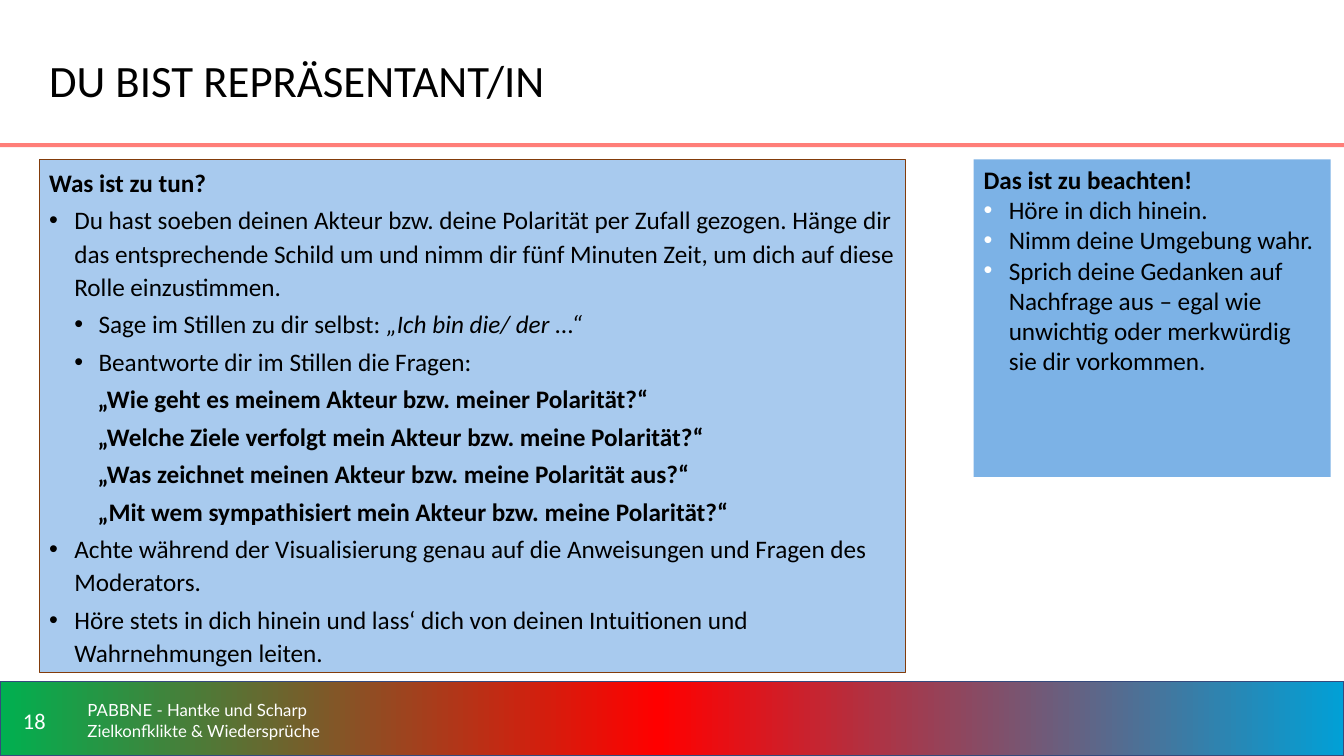
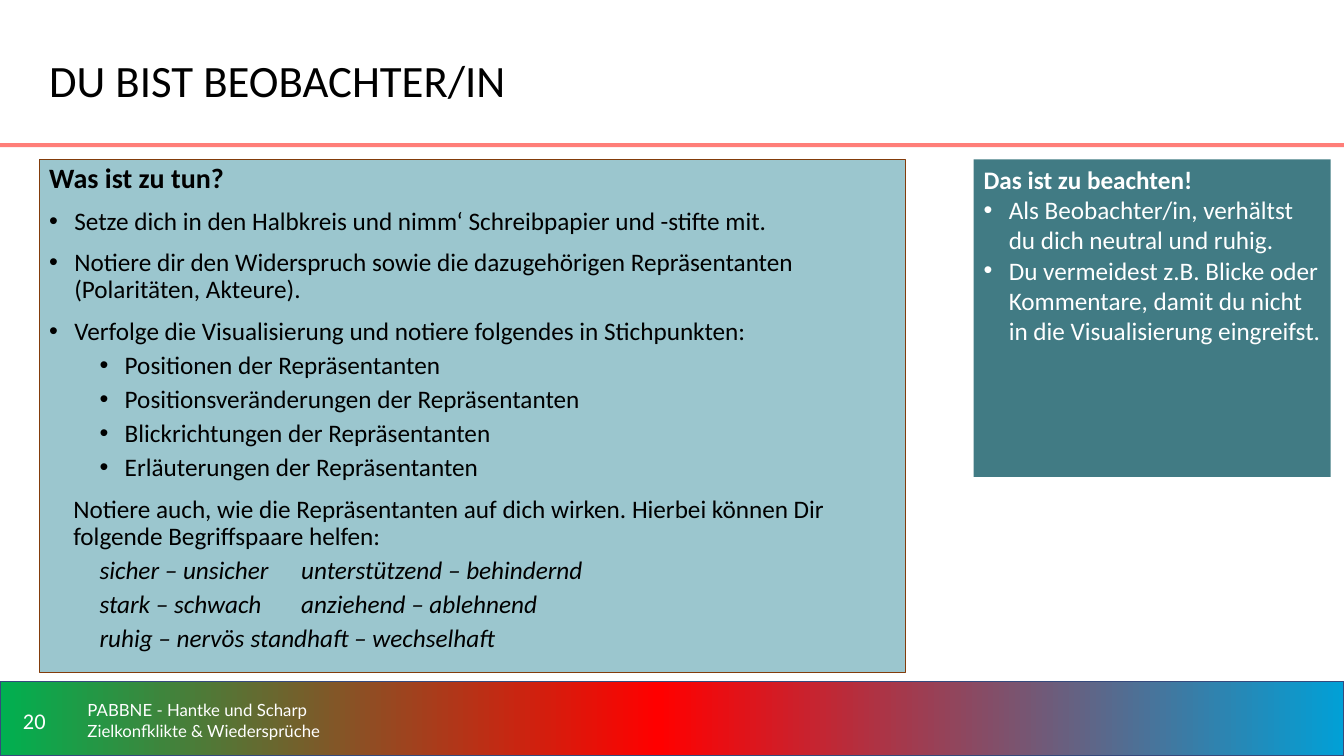
from copy import deepcopy

from pptx import Presentation
from pptx.dml.color import RGBColor
from pptx.enum.shapes import MSO_SHAPE as Shape
from pptx.enum.text import MSO_ANCHOR as Anchor, PP_ALIGN as Align
from pptx.oxml.ns import qn
from pptx.oxml.xmlchemy import OxmlElement
from pptx.util import Pt

# Content: paragraphs are (style, text) or (style, text, italic ending)
FOOTER = "PABBNE - Hantke und Scharp Zielkonfklikte & Wiedersprüche"
TASK_HEADING = "Was ist zu tun?"
ADVICE_HEADING = "Das ist zu beachten!"
SLIDES = [
    {
        "title": "DU BIST REPRÄSENTANT/IN",
        "number": "18",
        "task": {
            "fill": "task_blue", "text": "black", "bullet": "black",
            "heading_size": 18, "line_spacing": 1.1, "space": {0: 3, 1: 3},
            "paragraphs": [
                ("heading", TASK_HEADING),
                ("bullet", "Du hast soeben deinen Akteur bzw. deine Polarität per Zufall gezogen. "
                           "Hänge dir das entsprechende Schild um und nimm dir fünf Minuten Zeit, "
                           "um dich auf diese Rolle einzustimmen."),
                ("inner bullet", "Sage im Stillen zu dir selbst: ", "„Ich bin die/ der ...“"),
                ("inner bullet", "Beantworte dir im Stillen die Fragen:"),
                ("question", "„Wie geht es meinem Akteur bzw. meiner Polarität?“"),
                ("question", "„Welche Ziele verfolgt mein Akteur bzw. meine Polarität?“"),
                ("question", "„Was zeichnet meinen Akteur bzw. meine Polarität aus?“"),
                ("question", "„Mit wem sympathisiert mein Akteur bzw. meine Polarität?“"),
                ("bullet", "Achte während der Visualisierung genau auf die Anweisungen und "
                           "Fragen des Moderators."),
                ("bullet", "Höre stets in dich hinein und lass‘ dich von deinen Intuitionen und "
                           "Wahrnehmungen leiten."),
            ],
        },
        "advice": {
            "fill": "advice_blue", "text": "black", "bullet": "white",
            "paragraphs": [
                ("heading", ADVICE_HEADING),
                ("bullet", "Höre in dich hinein."),
                ("bullet", "Nimm deine Umgebung wahr."),
                ("bullet", "Sprich deine Gedanken auf Nachfrage aus – egal wie unwichtig oder "
                           "merkwürdig sie dir vorkommen."),
            ],
        },
    },
    {
        "title": "DU BIST BEOBACHTER/IN",
        "number": "20",
        "task": {
            "fill": "task_teal", "text": "black", "bullet": "black",
            "heading_size": 20, "line_spacing": 0.9, "space": {0: 10, 1: 5},
            "paragraphs": [
                ("heading", TASK_HEADING),
                ("bullet", "Setze dich in den Halbkreis und nimm‘ Schreibpapier und -stifte mit."),
                ("bullet", "Notiere dir den Widerspruch sowie die dazugehörigen Repräsentanten "
                           "(Polaritäten, Akteure)."),
                ("bullet", "Verfolge die Visualisierung und notiere folgendes in Stichpunkten:"),
                ("sub-bullet", "Positionen der Repräsentanten"),
                ("sub-bullet", "Positionsveränderungen der Repräsentanten"),
                ("sub-bullet", "Blickrichtungen der Repräsentanten"),
                ("sub-bullet", "Erläuterungen der Repräsentanten"),
                ("note", "Notiere auch, wie die Repräsentanten auf dich wirken. Hierbei können "
                         "Dir folgende Begriffspaare helfen:"),
                ("word pair", "sicher – unsicher\tunterstützend – behindernd"),
                ("word pair", "stark – schwach\tanziehend – ablehnend"),
                ("word pair", "ruhig – nervös\tstandhaft – wechselhaft"),
            ],
        },
        "advice": {
            "fill": "advice_teal", "text": "white", "bullet": "white",
            "paragraphs": [
                ("heading", ADVICE_HEADING),
                ("bullet", "Als Beobachter/in, verhältst du dich neutral und ruhig."),
                ("bullet", "Du vermeidest z.B. Blicke oder Kommentare, damit du nicht in die "
                           "Visualisierung eingreifst."),
            ],
        },
    },
]

# Shared look
COLORS = {
    "black": "000000", "white": "FFFFFF", "rule": "FF7E79",
    "band_line": "364A7D", "task_line": "833C0B",
    "task_blue": "A8CAEE", "advice_blue": "7CB2E6",
    "task_teal": "9BC6CE", "advice_teal": "417B84",
}
BAND_STOPS = [(0, "00B050"), (0.49, "FF0000"), (1, "01A0D6")]
BODY_FONT, FOOTER_FONT = "Calibri", "Lato"
BODY_SIZE = 18
WIDTH, HEIGHT = 960, 540

# Places: left, top, width, height
BAND = (0, 486.7, WIDTH, HEIGHT - 486.7)
RULE = (0, 102.2, WIDTH, 3)
TITLE = (28, 14.4, 708.5, 85)
NUMBER = (0, 492.5, 49, 44)
FOOTER_PLACE = (55.4, 492.5, 200.2, 44)
TASK = (28, 113.8, 618.5, 366.5)
ADVICE = (695.5, 113.8, 255, 226.8)

# Paragraph styles: left margin and first-line indent in points
STYLES = {
    "heading": {"bold": True},
    "bullet": {"indent": (18, -18), "bullet": True},
    "inner bullet": {"indent": (35.3, -17.3), "bullet": True},
    "question": {"indent": (17.3, 17.3), "bold": True},
    "sub-bullet": {"indent": (54, -18), "bullet": True, "level": 1},
    "note": {"indent": (17.3, 0)},
    "word pair": {"indent": (0, 36), "tab": 180, "level": 1, "italic": True},
}


def rgb(name):
    return RGBColor.from_string(COLORS[name])


def add_child(parent, tag, **attributes):
    child = OxmlElement(tag)
    for key, value in attributes.items():
        child.set(key, str(value))
    parent.append(child)
    return child


def add_rectangle(page, place, fill=None, line=None, line_width=1):
    box = page.shapes.add_shape(Shape.RECTANGLE, *map(Pt, place))
    box.shadow.inherit = False
    if fill:
        box.fill.solid()
        box.fill.fore_color.rgb = rgb(fill)
    if line:
        box.line.color.rgb = rgb(line)
        box.line.width = Pt(line_width)
    else:
        box.line.fill.background()
    return box


def add_band(page):
    band = add_rectangle(page, BAND, line="band_line")
    band.fill.gradient()
    band.fill.gradient_angle = 0
    stop_list = band.element.spPr.find(".//" + qn("a:gsLst"))
    stop_list.append(deepcopy(stop_list[0]))
    for stop, (position, color) in zip(band.fill.gradient_stops, BAND_STOPS):
        stop.position = position
        stop.color.rgb = RGBColor.from_string(color)


def format_span(span, size, color, font=BODY_FONT, bold=False, italic=False):
    span.font.name = font
    span.font.size = Pt(size)
    span.font.color.rgb = rgb(color)
    span.font.bold = bold
    span.font.italic = italic


def add_label(page, place, text, size, color, font=BODY_FONT, align=Align.LEFT):
    frame = page.shapes.add_textbox(*map(Pt, place)).text_frame
    frame.word_wrap = True
    frame.vertical_anchor = Anchor.MIDDLE
    frame.text = text
    para = frame.paragraphs[0]
    para.alignment = align
    format_span(para.runs[0], size, color, font)


def set_layout(para, style, bullet_color):
    """Set indents, bullet and tab stop of a paragraph."""
    properties = para._p.get_or_add_pPr()
    margin, first_line = style.get("indent", (0, 0))
    properties.set("marL", str(Pt(margin)))
    properties.set("indent", str(Pt(first_line)))
    if style.get("bullet"):
        add_child(add_child(properties, "a:buClr"), "a:srgbClr", val=COLORS[bullet_color])
        add_child(properties, "a:buFont", typeface="Arial")
        add_child(properties, "a:buChar", char="•")
    else:
        add_child(properties, "a:buNone")
    if "tab" in style:
        tabs = add_child(properties, "a:tabLst")
        add_child(tabs, "a:tab", pos=Pt(style["tab"]), algn="l")


def add_panel(page, place, panel, line=None):
    box = add_rectangle(page, place, panel["fill"], line, 0.75)
    frame = box.text_frame
    frame.word_wrap = True
    frame.vertical_anchor = Anchor.TOP
    for index, (name, *texts) in enumerate(panel["paragraphs"]):
        style = STYLES[name]
        level = style.get("level", 0)
        para = frame.add_paragraph() if index else frame.paragraphs[0]
        set_layout(para, style, panel["bullet"])
        para.level = level
        para.alignment = Align.LEFT
        para.line_spacing = panel.get("line_spacing", 1.0)
        if index and "space" in panel:
            para.space_before = Pt(panel["space"][level])
        size = panel.get("heading_size", BODY_SIZE) if name == "heading" else BODY_SIZE
        for part, text in enumerate(texts):
            span = para.add_run()
            span.text = text
            format_span(span, size, panel["text"], bold=style.get("bold", False),
                        italic=style.get("italic", part > 0))


def main():
    deck = Presentation()
    deck.slide_width, deck.slide_height = Pt(WIDTH), Pt(HEIGHT)
    for content in SLIDES:
        page = deck.slides.add_slide(deck.slide_layouts[6])
        # Frame shared by all slides
        add_band(page)
        add_rectangle(page, RULE, "rule")
        add_label(page, TITLE, content["title"], 32, "black")
        add_label(page, NUMBER, content["number"], 16, "white", align=Align.CENTER)
        add_label(page, FOOTER_PLACE, FOOTER, 12, "white", FOOTER_FONT)
        # Panels
        add_panel(page, TASK, content["task"], "task_line")
        add_panel(page, ADVICE, content["advice"])
    deck.save("out.pptx")


if __name__ == "__main__":
    main()
